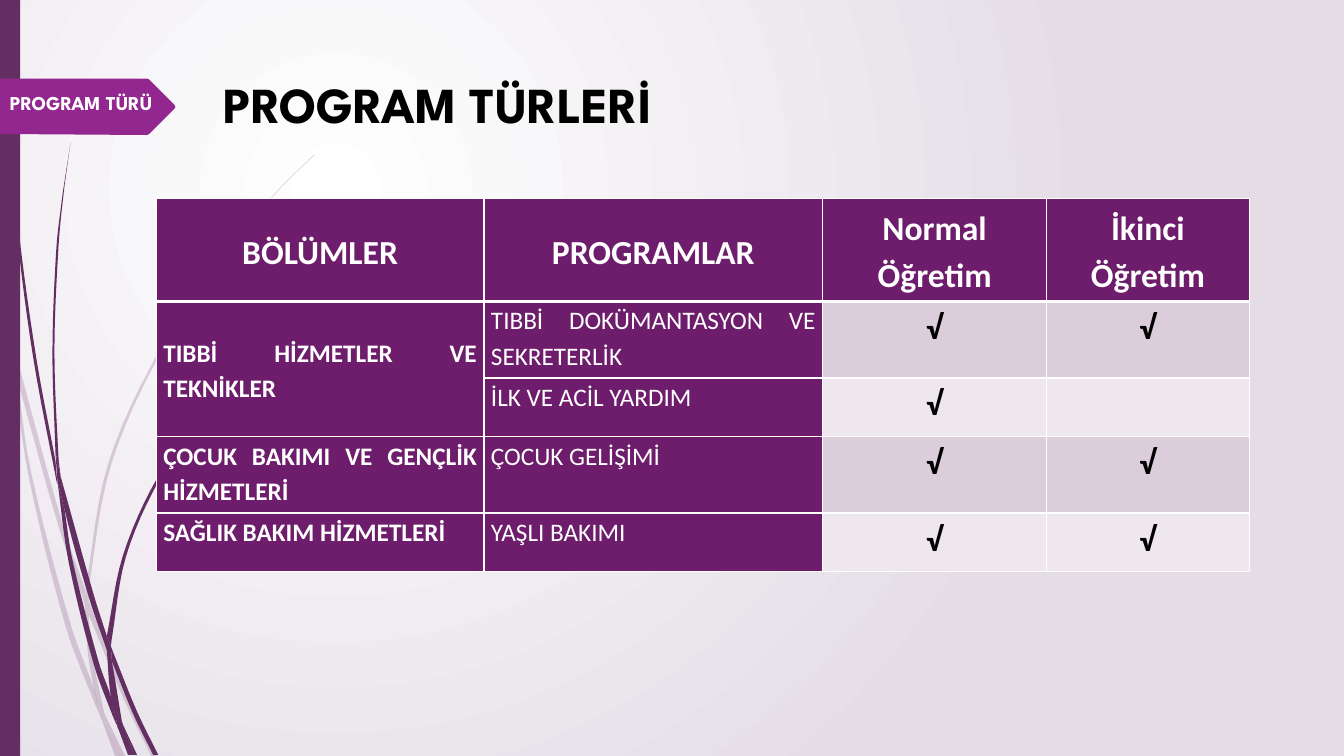
import math

import pptx
import pptx.dml.color
import pptx.enum.text
import pptx.oxml.ns
import pptx.oxml.xmlchemy
import pptx.util
from lxml import etree

EMU_PER_PX = 9144  # 100 px to the inch
RGB = pptx.dml.color.RGBColor
ALIGN = pptx.enum.text.PP_ALIGN
ANCHOR = pptx.enum.text.MSO_ANCHOR
qn = pptx.oxml.ns.qn

WHITE = RGB(0xFF, 0xFF, 0xFF)
BLACK = RGB(0x00, 0x00, 0x00)
MIST = RGB(0xE4, 0xDD, 0xE6)
STEM = RGB(0x63, 0x2E, 0x62)
TAG = RGB(0x92, 0x27, 0x8F)
PLUM = RGB(0x6D, 0x1D, 0x6B)
BANDS = [RGB(0xDC, 0xCD, 0xDB), RGB(0xEE, 0xE8, 0xEE)]

# Each blade of grass is a pair of edges: one out, one back.
PALE_BLADES = [
    ([(11, 350), (9, 322), (0, 282)], [(0, 299), (10, 344)]),
    ([(17, 376), (58, 522), (84, 599)], [(85, 586), (62, 520), (14, 345)]),
    ([(88, 596), (92, 607), (127, 692), (155, 750)], [(150, 750), (123, 694), (88, 610)]),
    ([(124, 750), (105, 711)], [(119, 750)]),
    ([(11, 350), (28, 470), (65, 621), (92, 693), (101, 714)],
     [(99, 707), (93, 683), (70, 619), (31, 469), (17, 376)]),
    ([(84, 599), (87, 646), (93, 683), (96, 692), (105, 711)],
     [(103, 706), (91, 646), (88, 610)]),
    ([(312, 153), (289, 175), (268, 197), (228, 244), (158, 348), (107, 461), (85, 584)],
     [(88, 596), (88, 584), (110, 462), (160, 349), (229, 245), (268, 198), (290, 175),
      (312, 154)]),
    ([(101, 714), (114, 750)], [(119, 750)]),
    ([(84, 599), (88, 610)], [(88, 596), (85, 586)]),
    ([(93, 683), (99, 707), (101, 714), (119, 750)], [(105, 711), (96, 692)]),
]
DARK_BLADES = [
    ([(3, 0), (4, 48), (7, 110), (17, 233), (33, 355), (56, 477), (57, 481)],
     [(55, 457), (36, 355), (19, 232), (8, 109), (5, 48), (4, 0)]),
    ([(60, 472), (64, 505), (88, 592), (106, 645)], [(106, 631), (93, 590), (60, 472)]),
    ([(110, 641), (113, 649), (136, 706), (157, 749)], [(152, 749), (132, 708), (111, 656)]),
    ([(57, 477), (68, 557), (93, 659), (111, 708), (117, 722)],
     [(116, 717), (110, 691), (98, 657), (72, 556), (64, 505)]),
    ([(60, 472), (58, 453), (54, 349), (58, 245), (63, 193), (70, 141)],
     [(62, 193), (56, 245), (52, 349), (55, 449)]),
    ([(122, 719), (133, 749)], [(136, 749)]),
    ([(57, 477), (64, 505)], [(60, 472), (55, 449)]),
    ([(260, 344), (245, 358), (231, 373), (204, 405), (156, 474), (122, 551), (106, 631)],
     [(110, 641), (111, 633), (125, 552), (158, 476), (205, 406), (231, 374), (245, 359),
      (261, 344)]),
    ([(117, 722), (127, 749)], [(131, 749)]),
    ([(106, 645), (110, 691), (116, 706), (122, 719)], [(121, 716), (111, 656), (109, 651)]),
    ([(106, 645), (111, 656)], [(110, 641), (106, 631)]),
    ([(110, 691), (116, 717), (117, 722), (130, 749)], [(133, 749), (122, 719), (116, 706)]),
]
TAG_OUTLINE = [(0, 78), (146, 78), (148, 79), (173, 104), (174, 106), (173, 108),
               (148, 133), (146, 134), (0, 133)]

HEADINGS = ["BÖLÜMLER", "PROGRAMLAR", "Normal Öğretim", "İkinci Öğretim"]
PROGRAMS = [
    ("TIBBİ HİZMETLER VE TEKNİKLER", "TIBBİ DOKÜMANTASYON VE SEKRETERLİK", "√", "√"),
    ("", "İLK VE ACİL YARDIM", "√", ""),
    ("ÇOCUK BAKIMI VE GENÇLİK HİZMETLERİ", "ÇOCUK GELİŞİMİ", "√", "√"),
    ("SAĞLIK BAKIM HİZMETLERİ", "YAŞLI BAKIMI", "√", "√"),
]
COLUMN_WIDTHS = [325, 336, 222, 201]
ROW_HEIGHTS = [102, 76, 58, 76, 58]


def px(length):
    return pptx.util.Emu(round(length * EMU_PER_PX))


def smooth(edge, steps=6):
    """Return points on a soft curve through the edge, spaced by chord length."""
    last = len(edge) - 1
    if last < 2:
        return edge
    at = [0]
    for start, end in zip(edge, edge[1:]):
        at.append(at[-1] + math.dist(start, end))
    slopes = []
    for i in range(last + 1):
        a, b = max(i - 1, 0), min(i + 1, last)
        slopes.append([(q - p) / (at[b] - at[a]) for p, q in zip(edge[a], edge[b])])
    curve = [edge[0]]
    for i in range(last):
        span = at[i + 1] - at[i]
        for step in range(1, steps + 1):
            t = step / steps
            near = (1 + 2 * t) * (1 - t) ** 2
            curve.append(tuple(
                near * p + (1 - near) * q
                + span * (t * (1 - t) ** 2 * m - t * t * (1 - t) * n)
                for p, q, m, n in zip(edge[i], edge[i + 1], slopes[i], slopes[i + 1])))
    return curve


def write(frame, text, *, size, color, font="Calibri", bold=True, align=ALIGN.LEFT, spacing=1.0):
    paragraph = frame.paragraphs[0]
    paragraph.alignment = align
    paragraph.line_spacing = spacing
    run = paragraph.add_run()
    run.text = text
    run.font.name = font
    run.font.size = pptx.util.Pt(size)
    run.font.bold = bold
    run.font.color.rgb = color


class ProgramSlide:
    def __init__(self, deck):
        self.slide = deck.slides.add_slide(deck.slide_layouts[6])
        self.shapes = self.slide.shapes
        self.heading_font = "League Spartan"

    def glow(self, inner, outer):
        """Fill the background with a round gradient centred in the upper left."""
        fill = self.slide.background.fill
        fill.gradient()
        for stop, color, position in zip(fill.gradient_stops, (inner, outer), (0, 1)):
            stop.color.rgb = color
            stop.position = position
        gradient = self.slide.element.find(".//" + qn("a:gradFill"))
        gradient.remove(gradient.find(qn("a:lin")))
        circle = etree.SubElement(gradient, qn("a:path"), {"path": "circle"})
        etree.SubElement(circle, qn("a:fillToRect"),
                         {"l": "50000", "t": "50000", "r": "100000", "b": "100000"})

    def paint(self, shape, color, opacity=100):
        shape.shadow.inherit = False
        shape.line.fill.background()
        shape.fill.solid()
        shape.fill.fore_color.rgb = color
        if opacity < 100:
            tint = shape.element.spPr.find(".//" + qn("a:srgbClr"))
            etree.SubElement(tint, qn("a:alpha"), {"val": str(opacity * 1000)})

    def outline(self, points, color, opacity=100):
        start, *rest = [(px(x), px(y)) for x, y in points]
        builder = self.shapes.build_freeform(*start, scale=1.0)
        builder.add_line_segments(rest, close=True)
        self.paint(builder.convert_to_shape(), color, opacity)

    def bar(self, left, top, width, height, color):
        kind = pptx.enum.shapes.MSO_SHAPE.RECTANGLE
        self.paint(self.shapes.add_shape(kind, *map(px, (left, top, width, height))), color)

    def heading(self, text, box, size, color, anchor):
        frame = self.shapes.add_textbox(*map(px, box)).text_frame
        frame.word_wrap = True
        frame.vertical_anchor = anchor
        write(frame, text, size=size, color=color, font=self.heading_font)

    def border(self, cell, side, points):
        edge = etree.SubElement(cell._tc.get_or_add_tcPr(), qn("a:ln" + side),
                                {"w": str(pptx.util.Pt(points))})
        solid = etree.SubElement(edge, qn("a:solidFill"))
        etree.SubElement(solid, qn("a:srgbClr"), {"val": str(WHITE)})

    def cell(self, cell, row, column, text):
        is_header, is_mark = row == 0, column > 1
        for side in "LRTB":
            thick = (row, side) in ((0, "B"), (1, "T"))
            self.border(cell, side, 3 if thick else 1)
        cell.fill.solid()
        cell.fill.fore_color.rgb = BANDS[(row - 1) % 2] if is_mark and not is_header else PLUM
        cell.margin_left = cell.margin_right = px(7)
        cell.margin_top = cell.margin_bottom = 0
        middle = is_header or (row, column) == (1, 0)
        cell.vertical_anchor = ANCHOR.MIDDLE if middle else ANCHOR.TOP
        if text:
            write(cell.text_frame, text, spacing=1.15,
                  size=24 if is_header or is_mark else 18,
                  color=BLACK if is_mark and not is_header else WHITE,
                  bold=is_header or column != 1,
                  align=ALIGN.CENTER if is_header or is_mark else ALIGN.JUSTIFY)

    def program_table(self, left, top):
        rows = [HEADINGS, *PROGRAMS]
        table = self.shapes.add_table(
            len(rows), len(HEADINGS), px(left), px(top),
            px(sum(COLUMN_WIDTHS)), px(sum(ROW_HEIGHTS))).table
        table.first_row = table.horz_banding = False
        for column, width in zip(table.columns, COLUMN_WIDTHS):
            column.width = px(width)
        for r, (texts, height) in enumerate(zip(rows, ROW_HEIGHTS)):
            table.rows[r].height = px(height)
            for c, text in enumerate(texts):
                self.cell(table.cell(r, c), r, c, text)
        table.cell(1, 0).merge(table.cell(2, 0))


def main():
    deck = pptx.Presentation()
    deck.slide_width, deck.slide_height = px(1333), px(750)
    page = ProgramSlide(deck)
    page.glow(WHITE, MIST)
    for blades, opacity in ((PALE_BLADES, 20), (DARK_BLADES, 100)):
        for out, back in blades:
            page.outline(smooth(out) + smooth(back), STEM, opacity)
    page.bar(0, 0, 20, 750, STEM)
    page.outline(TAG_OUTLINE, TAG)
    page.heading("PROGRAM TÜRÜ", (0, 85, 210, 34), 14, WHITE, ANCHOR.TOP)
    page.program_table(155, 197)
    page.heading("PROGRAM TÜRLERİ", (212, 65, 975, 75), 36, BLACK, ANCHOR.MIDDLE)
    deck.save("out.pptx")


if __name__ == "__main__":
    main()
